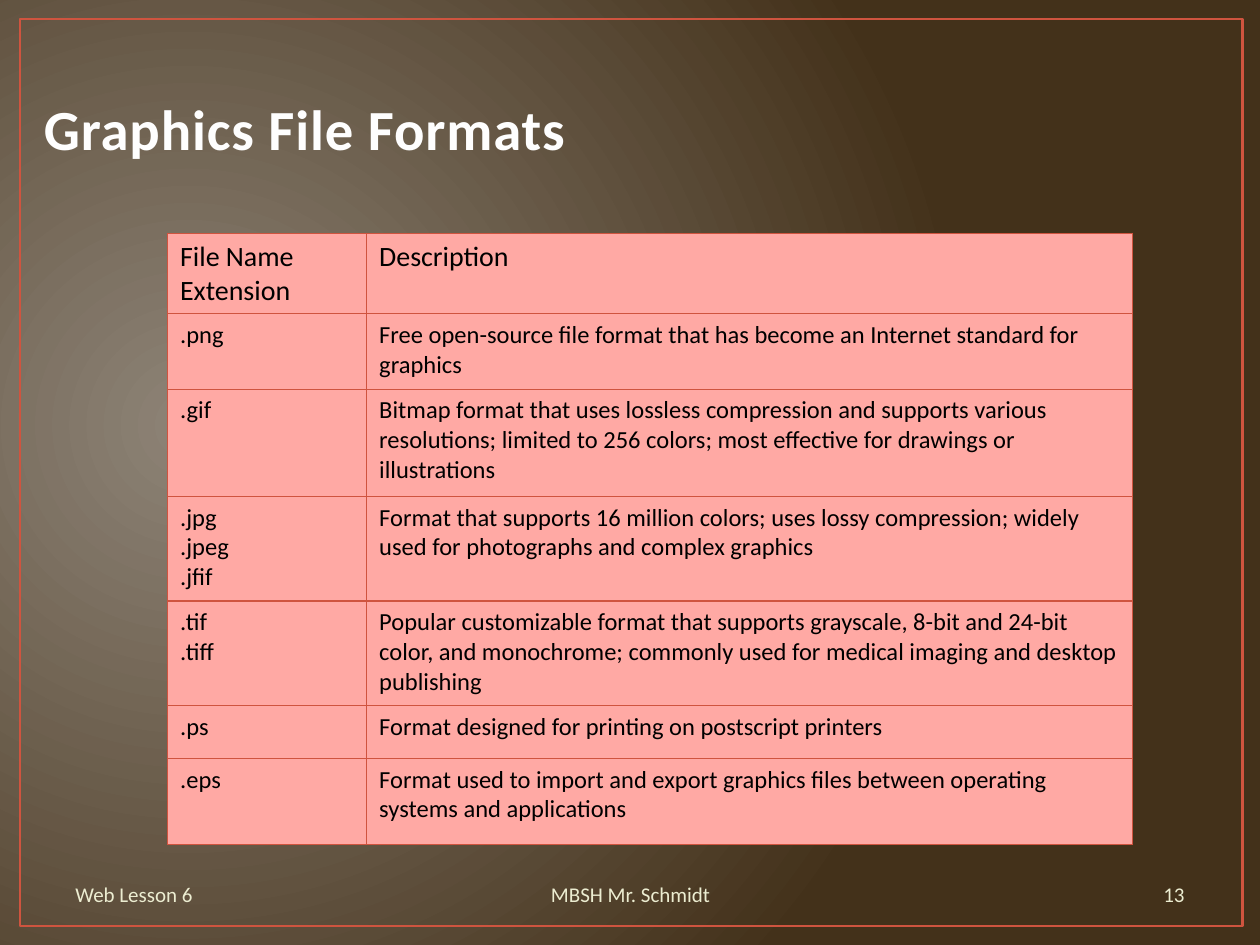
from copy import deepcopy
from typing import NamedTuple

from lxml.etree import SubElement
from pptx import Presentation
from pptx.dml.color import RGBColor
from pptx.enum.shapes import MSO_SHAPE
from pptx.enum.text import MSO_ANCHOR, PP_ALIGN
from pptx.oxml.ns import qn
from pptx.util import Inches, Pt

FONT = "Calibri"
ACCENT, PINK, CREAM = "CF543F", "FFA9A4", "ECEDD1"
COLUMN_WIDTHS = (1.58, 6.08)


class Format(NamedTuple):
    """One row of the file format table."""
    extension: str
    description: str
    height: float
    size: float = 14


class Label(NamedTuple):
    """One footer text with its horizontal extent."""
    text: str
    left: float
    width: float
    align: PP_ALIGN


FORMATS = (
    Format("File Name Extension", "Description", 0.64, 16),
    Format(".png", "Free open-source file format that has become an Internet "
           "standard for graphics", 0.6),
    Format(".gif", "Bitmap format that uses lossless compression and supports various "
           "resolutions; limited to 256 colors; most effective for drawings or "
           "illustrations", 0.85),
    Format(".jpg\n.jpeg\n.jfif", "Format that supports 16 million colors; uses lossy "
           "compression; widely used for photographs and complex graphics", 0.83),
    Format(".tif\n.tiff", "Popular customizable format that supports grayscale, 8-bit "
           "and 24-bit color, and monochrome; commonly used for medical imaging and "
           "desktop publishing", 0.83),
    Format(".ps", "Format designed for printing on postscript printers", 0.42),
    Format(".eps", "Format used to import and export graphics files between operating "
           "systems and applications", 0.68),
)
FOOTERS = (
    Label("Web Lesson 6", 0.5, 2.33, PP_ALIGN.LEFT),
    Label("MBSH Mr. Schmidt", 3.1, 3.81, PP_ALIGN.CENTER),
    Label("13", 7.17, 2.33, PP_ALIGN.RIGHT),
)


def rgb(value: str) -> RGBColor:
    """Turn a hex string into a colour."""
    return RGBColor.from_string(value)


def add_line(parent, tag: str, color: str, width: float, index: int) -> None:
    """Insert a solid line of the given tag into an XML element."""
    line = SubElement(parent, qn(tag), w=str(Pt(width)))
    fill = SubElement(line, qn("a:solidFill"))
    SubElement(fill, qn("a:srgbClr"), val=color)
    parent.insert(index, line)


def write(frame, text: str, *, size: float, color: str, bold: bool = False,
          align: PP_ALIGN = PP_ALIGN.LEFT, before: float = 0):
    """Write one formatted paragraph, with breaks at newlines."""
    para = frame.paragraphs[0]
    para.text = text
    para.alignment = align
    para.space_before = Pt(before)
    for span in para.runs:
        span.font.name, span.font.size, span.font.bold = FONT, Pt(size), bold
        span.font.color.rgb = rgb(color)
    properties = para.runs[0].font._element
    for line_break in para._p.findall(qn("a:br")):
        line_break.insert(0, deepcopy(properties))
    return para


def add_text(page, text: str, left: float, top: float, width: float, height: float,
             anchor: MSO_ANCHOR, **style):
    """Add a wrapping text box and return its paragraph."""
    box = page.shapes.add_textbox(*map(Inches, (left, top, width, height)))
    box.text_frame.word_wrap = True
    box.text_frame.vertical_anchor = anchor
    return write(box.text_frame, text, **style)


def paint_background(page) -> None:
    """Fill the page with a circular gradient."""
    fill = page.background.fill
    fill.gradient()
    for stop, position, color in zip(fill.gradient_stops, (0, 1), ("8D8376", "43311A")):
        stop.position, stop.color.rgb = position, rgb(color)
    gradient = next(page._element.iter(qn("a:gradFill")))
    gradient.remove(gradient.find(qn("a:lin")))
    circle = SubElement(gradient, qn("a:path"))
    circle.set("path", "circle")
    SubElement(circle, qn("a:fillToRect"), l="15000", t="50000", r="85000", b="60000")


def add_frame(page) -> None:
    """Draw the outline around the page."""
    frame = page.shapes.add_shape(MSO_SHAPE.RECTANGLE, *map(Inches, (0.16, 0.15, 9.7, 7.2)))
    frame.shadow.inherit = False
    frame.fill.background()
    frame.line.color.rgb = rgb(ACCENT)
    frame.line.width = Pt(1.5)


def add_title(page) -> None:
    """Add the spaced and outlined heading."""
    para = add_text(page, "Graphics File Formats", 0.25, 0.72, 9.58, 0.61,
                    MSO_ANCHOR.BOTTOM, size=32.4, color="FEFEFE", bold=True)
    properties = para.runs[0].font._element
    properties.set("spc", "50")
    add_line(properties, "a:ln", "47534C", 1.05, 0)


def add_formats(page) -> None:
    """Add the table of file formats."""
    height = sum(row.height for row in FORMATS)
    table = page.shapes.add_table(len(FORMATS), len(COLUMN_WIDTHS), Inches(1.33), Inches(1.85),
                                  Inches(sum(COLUMN_WIDTHS)), Inches(height)).table
    for column, width in zip(table.columns, COLUMN_WIDTHS):
        column.width = Inches(width)
    for row, item in zip(table.rows, FORMATS):
        row.height = Inches(item.height)
        for cell, text in zip(row.cells, (item.extension, item.description)):
            write(cell.text_frame, text, size=item.size, color="000000",
                  before=item.size * 0.2)
            cell.fill.solid()
            cell.fill.fore_color.rgb = rgb(PINK)
            for index, side in enumerate("LRTB"):
                add_line(cell._tc.tcPr, f"a:ln{side}", ACCENT, 0.75, index)


def main() -> None:
    """Build and save the slide."""
    deck = Presentation()
    deck.slide_width, deck.slide_height = Inches(10), Inches(7.5)
    page = deck.slides.add_slide(deck.slide_layouts[6])
    paint_background(page)
    add_frame(page)
    add_title(page)
    add_formats(page)
    for label in FOOTERS:
        add_text(page, label.text, label.left, 6.9, label.width, 0.4, MSO_ANCHOR.MIDDLE,
                 size=12, color=CREAM, align=label.align)
    deck.save("out.pptx")


if __name__ == "__main__":
    main()
